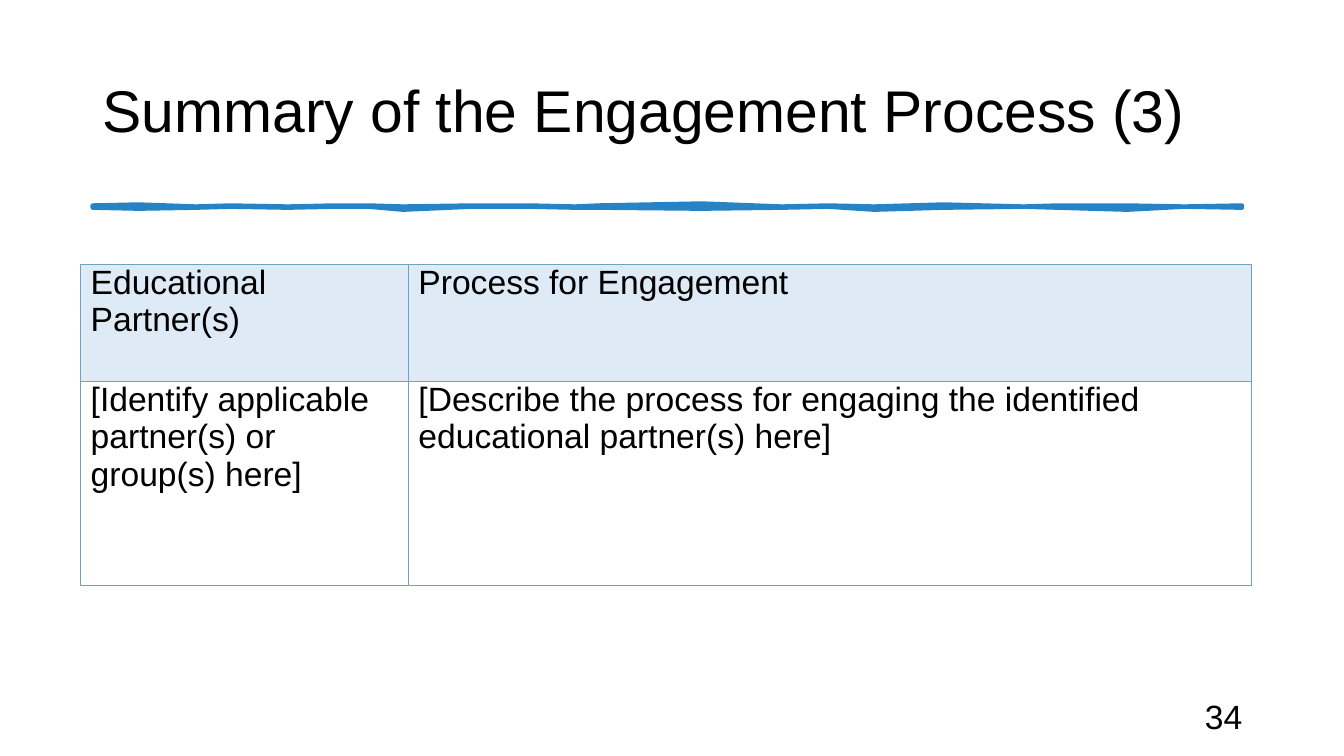
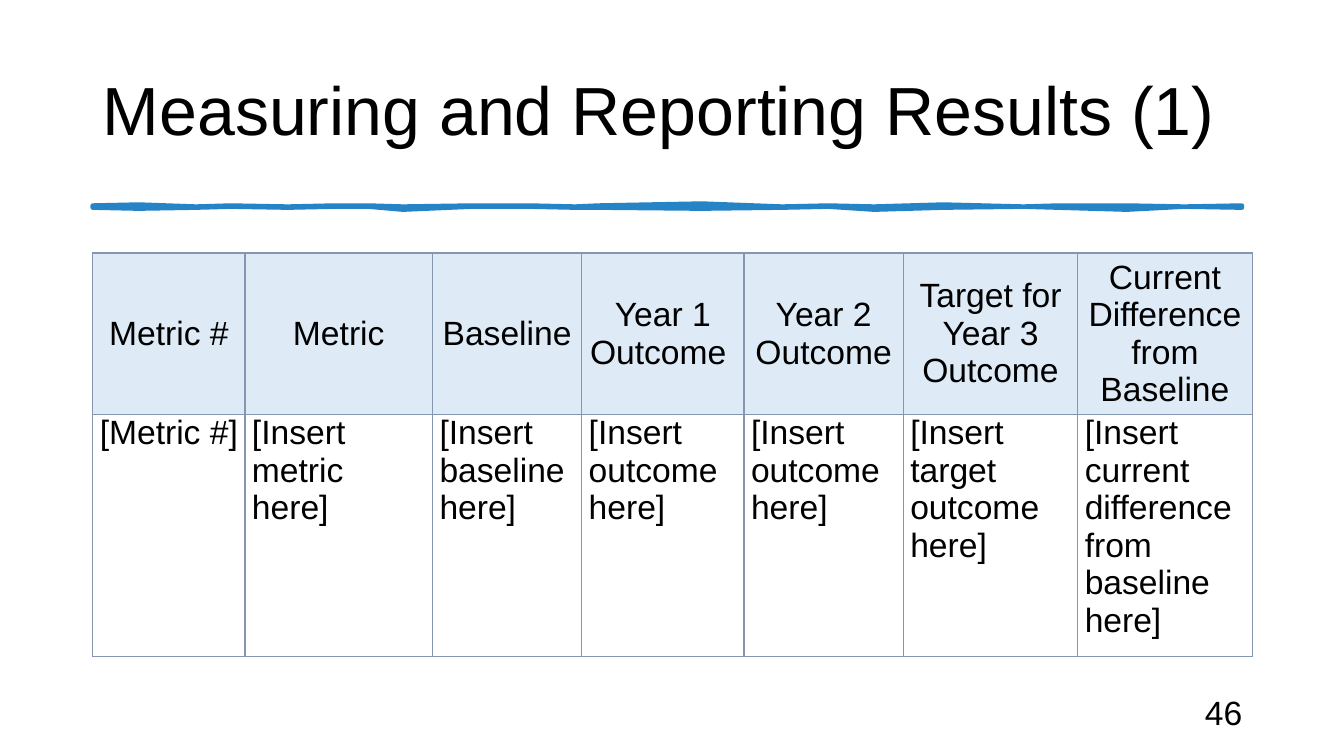
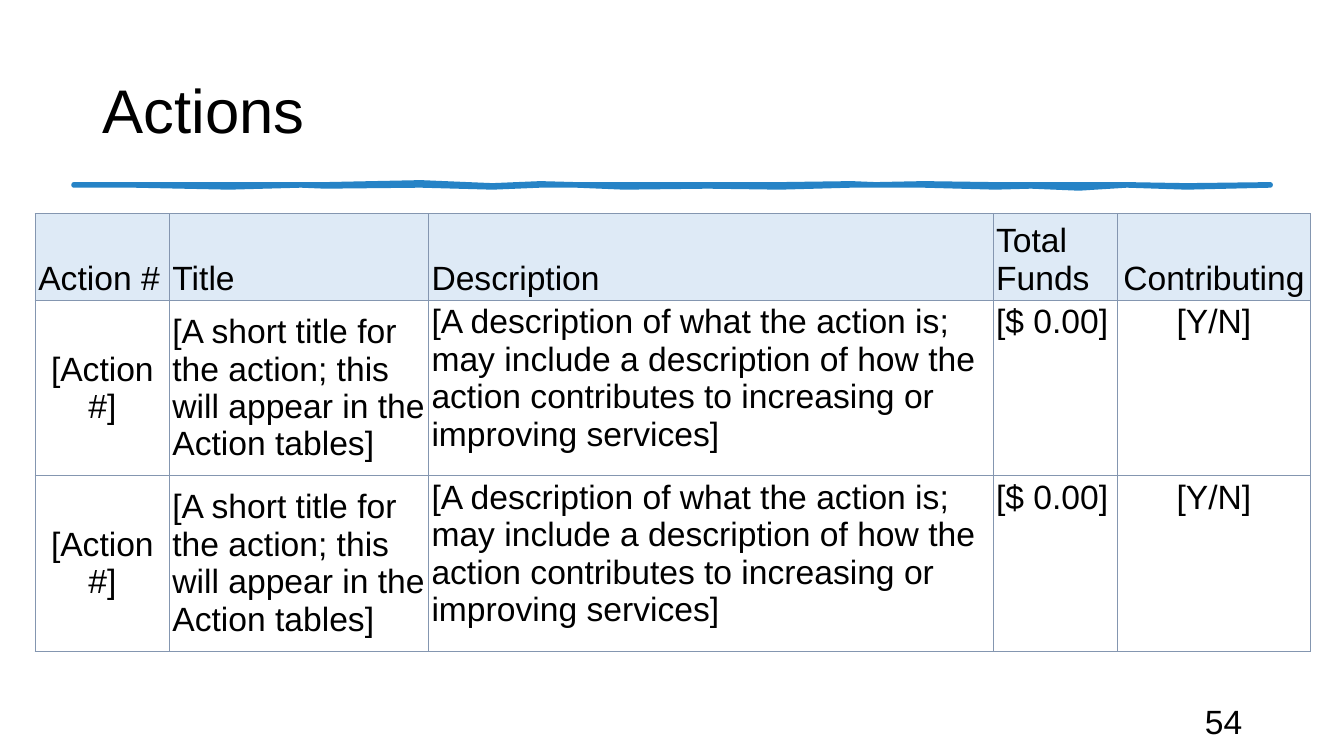
from dataclasses import dataclass

from lxml import etree
from pptx import Presentation
from pptx.dml.color import RGBColor
from pptx.enum.text import MSO_ANCHOR, PP_ALIGN
from pptx.oxml.ns import qn
from pptx.util import Inches, Pt

TOP, MIDDLE, BOTTOM = MSO_ANCHOR.TOP, MSO_ANCHOR.MIDDLE, MSO_ANCHOR.BOTTOM
LEFT, CENTER, RIGHT = PP_ALIGN.LEFT, PP_ALIGN.CENTER, PP_ALIGN.RIGHT

SLIDE_WIDTH = Inches(13.33)
SLIDE_HEIGHT = Inches(7.5)
BLANK_LAYOUT = 6


@dataclass(frozen=True)
class Theme:
    font: str = "Arial"
    text: str = "000000"
    accent: str = "2683C6"
    header_fill: str = "DEEAF6"
    body_fill: str = "FFFFFF"
    body_size: float = 24
    rule_weight: float = 3.25


THEME = Theme()


@dataclass(frozen=True)
class TableLook:
    border: str
    border_weight: float
    inset_x: float
    inset_y: float
    space_before: float
    header_anchor: int
    header_aligns: list
    body_anchors: list
    body_aligns: list


@dataclass(frozen=True)
class Brush:
    left: float
    top: float
    width: float
    strokes: list


MARGIN, CONTENT_WIDTH = 6.9, 86.27
PAGE_NUMBER_WIDTH, PAGE_NUMBER_BOTTOM = 22.5, 98

# Stroke entries: share of the width, then upper and lower edge in 1/100 inch.
WIDE_BRUSH = Brush(5.48, 24.4, 89.05, [
    (0, 0, 1), (5, 0, 1), (13, 0, 3), (19, 0, 1), (21, 0, 2), (29, -2, 1),
    (35, 1, 3), (39, -1, 1), (42, 0, 1), (46, 0, 3), (53, 0, 2), (59, 0, 3),
    (65, -1, 1), (67, 0, 1), (71, -1, 1), (77, 0, 3), (80, 0, 2), (84, 0, 4),
    (88, 0, 1), (93, 1, 3), (100, 0, 1)])
BRUSH = Brush(MARGIN, 27.2, 85.5, [
    (0, 0, 2), (4, -1, 3), (9, 1, 2), (12, 0, 1), (17, 1, 2), (21, 0, 1),
    (24, 0, 1), (27, 1, 4), (33, 0, 1), (38, 0, 1), (42, 1, 2), (44, 0, 2),
    (53, -2, 3), (60, 1, 2), (64, 0, 1), (68, 1, 4), (74, -1, 2), (81, 1, 1),
    (84, 0, 2), (90, 0, 4), (95, 1, 1), (100, 0, 2)])


def across(percent):
    return round(SLIDE_WIDTH * percent / 100)


def down(percent):
    return round(SLIDE_HEIGHT * percent / 100)


def color(value):
    return RGBColor.from_string(value)


def write(frame, text, size, align=LEFT):
    frame.word_wrap = True
    paragraph = frame.paragraphs[0]
    paragraph.text = text
    paragraph.alignment = align
    paragraph.font.name = THEME.font
    paragraph.font.size = Pt(size)
    paragraph.font.color.rgb = color(THEME.text)
    return paragraph


def add_text(slide, text, left, top, width, height, size, align=LEFT):
    box = slide.shapes.add_textbox(
        across(left), down(top), across(width), down(height))
    box.text_frame.vertical_anchor = MIDDLE
    return write(box.text_frame, text, size, align)


def add_brush_rule(slide, brush):
    left, top = across(brush.left), down(brush.top)
    width = across(brush.width)

    def point(share, offset):
        return left + round(width * share / 100), top + Inches(offset / 100)

    upper = [point(share, high) for share, high, low in brush.strokes]
    lower = [point(share, low) for share, high, low in brush.strokes]
    builder = slide.shapes.build_freeform(*upper[0], scale=1.0)
    builder.add_line_segments(upper[1:] + lower[::-1], close=True)
    rule = builder.convert_to_shape()
    rule.shadow.inherit = False
    rule.fill.solid()
    rule.fill.fore_color.rgb = color(THEME.accent)
    rule.line.color.rgb = color(THEME.accent)
    rule.line.width = Pt(THEME.rule_weight)
    etree.SubElement(rule.line._get_or_add_ln(), qn("a:round"))


def set_borders(cell, look):
    properties = cell._tc.get_or_add_tcPr()
    for index, side in enumerate(("a:lnL", "a:lnR", "a:lnT", "a:lnB")):
        line = etree.Element(qn(side), w=str(Pt(look.border_weight)))
        fill = etree.SubElement(line, qn("a:solidFill"))
        etree.SubElement(fill, qn("a:srgbClr"), val=look.border)
        properties.insert(index, line)


def format_cell(cell, text, look, fill, anchor, align):
    cell.margin_left = cell.margin_right = Inches(look.inset_x)
    cell.margin_top = cell.margin_bottom = Inches(look.inset_y)
    cell.vertical_anchor = anchor
    cell.fill.solid()
    cell.fill.fore_color.rgb = color(fill)
    paragraph = write(cell.text_frame, text, THEME.body_size, align)
    paragraph.space_before = Pt(look.space_before)
    paragraph.space_after = Pt(6)
    set_borders(cell, look)


def add_grid(slide, rows, look, left, top, width, weights, heights):
    table = slide.shapes.add_table(
        len(rows), len(weights), across(left), down(top),
        across(width), down(sum(heights))).table
    table.first_row = table.horz_banding = False
    for column, weight in zip(table.columns, weights):
        column.width = round(across(width) * weight / sum(weights))
    for row, height in zip(table.rows, heights):
        row.height = down(height)
    for row_index, texts in enumerate(rows):
        for column_index, text in enumerate(texts):
            if row_index == 0:
                fill, anchor = THEME.header_fill, look.header_anchor
                align = look.header_aligns[column_index]
            else:
                fill, anchor = THEME.body_fill, look.body_anchors[column_index]
                align = look.body_aligns[column_index]
            format_cell(table.cell(row_index, column_index), text, look,
                        fill, anchor, align)


def add_page(presentation, title, title_size, number, number_height, brush):
    slide = presentation.slides.add_slide(
        presentation.slide_layouts[BLANK_LAYOUT])
    add_brush_rule(slide, brush)
    heading = add_text(slide, title, MARGIN, 5.33, CONTENT_WIDTH, 19.33,
                       title_size)
    heading.line_spacing = 0.9
    add_text(slide, number, MARGIN + CONTENT_WIDTH - PAGE_NUMBER_WIDTH,
             PAGE_NUMBER_BOTTOM - number_height, PAGE_NUMBER_WIDTH,
             number_height, THEME.body_size, RIGHT)
    return slide


def build_engagement(presentation):
    slide = add_page(presentation, "Summary of the Engagement Process (3)",
                     42, "34", 6.67, BRUSH)
    look = TableLook("70A1C0", 0.75, 0.1, 0, 3, TOP,
                     [LEFT] * 2, [TOP] * 2, [LEFT] * 2)
    rows = [
        ["Educational Partner(s)", "Process for Engagement"],
        ["[Identify applicable partner(s) or group(s) here]",
         "[Describe the process for engaging the identified "
         "educational partner(s) here]"],
    ]
    add_grid(slide, rows, look, 6, 34.93, 87.1, [28, 72], [15.47, 27.07])


def build_results(presentation):
    slide = add_page(presentation, "Measuring and Reporting Results (1)",
                     48.6, "46", 7.73, BRUSH)
    look = TableLook("8496B0", 1, 0.07, 0, 0, MIDDLE,
                     [CENTER] * 7, [TOP] * 7, [LEFT] * 7)
    rows = [
        ["Metric #", "Metric", "Baseline", "Year 1 Outcome ",
         "Year 2 Outcome ", "Target for Year 3 Outcome",
         "Current Difference from Baseline"],
        ["[Metric #]", "[Insert metric here]", "[Insert baseline here]",
         "[Insert outcome here]", "[Insert outcome here]",
         "[Insert target outcome here]",
         "[Insert current difference from baseline here]"],
    ]
    add_grid(slide, rows, look, MARGIN, 33.47, CONTENT_WIDTH,
             [1.51, 1.86, 1.48, 1.61, 1.58, 1.73, 1.73], [19.6, 29.2])


def build_actions(presentation):
    slide = add_page(presentation, "Actions", 44, "54", 5.33, WIDE_BRUSH)
    look = TableLook("8496B0", 1, 0.03, 0.03, 0, BOTTOM,
                     [LEFT] * 4 + [CENTER],
                     [MIDDLE] * 2 + [TOP] * 3,
                     [CENTER] + [LEFT] * 3 + [CENTER])
    header = ["Action #", "Title", "Description", "Total Funds",
              "Contributing"]
    action = [
        "[Action #]",
        "[A short title for the action; this will appear in the "
        "Action tables]",
        "[A description of what the action is; may include a description of "
        "how the action contributes to increasing or improving services]",
        "[$ 0.00]",
        "[Y/N]",
    ]
    add_grid(slide, [header, action, action], look, 2.63, 28.27, 94.9,
             [1.33, 2.57, 5.6, 1.23, 1.92], [9.33, 23.2, 23.2])


def main():
    presentation = Presentation()
    presentation.slide_width = SLIDE_WIDTH
    presentation.slide_height = SLIDE_HEIGHT
    build_engagement(presentation)
    build_results(presentation)
    build_actions(presentation)
    presentation.save("out.pptx")


if __name__ == "__main__":
    main()
